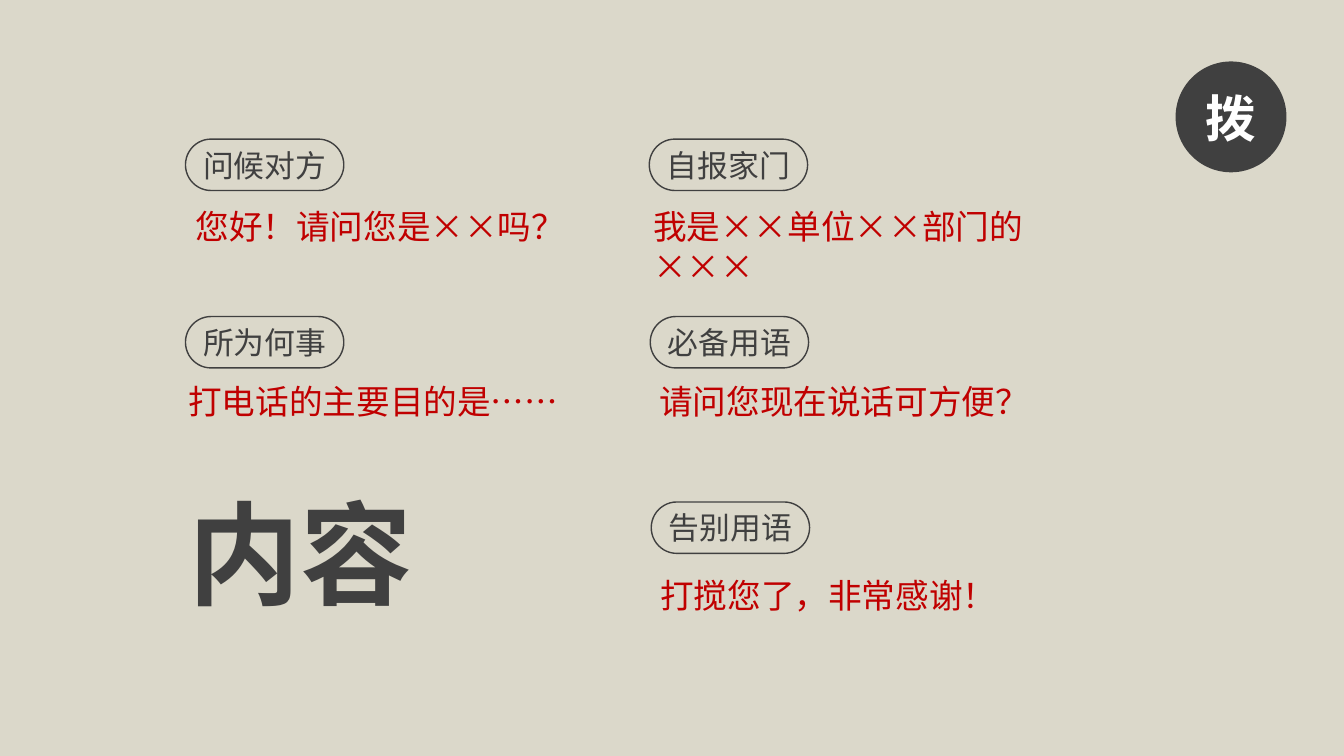
from lxml import etree
from pptx import Presentation
from pptx.dml.color import RGBColor
from pptx.enum.lang import MSO_LANGUAGE_ID as LANG
from pptx.enum.shapes import MSO_SHAPE as SHAPE
from pptx.enum.text import MSO_ANCHOR as ANCHOR, MSO_AUTO_SIZE as AUTO, PP_ALIGN as ALIGN
from pptx.oxml.ns import qn
from pptx.util import Inches, Pt

BEIGE = RGBColor(0xDB, 0xD8, 0xCA)
GRAY = RGBColor(0x40, 0x40, 0x40)
RED = RGBColor(0xC0, 0x00, 0x00)
WHITE = RGBColor(0xFF, 0xFF, 0xFF)
FONT = "Noto Sans CJK SC"


def write(sp, text, size, color, bold=False, align=ALIGN.LEFT, anchor=ANCHOR.TOP,
          wrap=True, fit=AUTO.NONE):
    tf = sp.text_frame
    tf.word_wrap = wrap
    tf.auto_size = fit
    tf.vertical_anchor = anchor
    p = tf.paragraphs[0]
    p.alignment = align
    r = p.add_run()
    r.text = text
    r.font.name = FONT
    r.font.size = Pt(size)
    r.font.bold = bold
    r.font.color.rgb = color
    r.font.language_id = LANG.SIMPLIFIED_CHINESE
    latin = r.font._element.find(qn("a:latin"))
    ea = etree.Element(qn("a:ea"), typeface=FONT)
    latin.addnext(ea)


prs = Presentation()
prs.slide_width = Inches(13.33)
prs.slide_height = Inches(7.5)
slide = prs.slides.add_slide(prs.slide_layouts[5])
slide.background.fill.solid()
slide.background.fill.fore_color.rgb = BEIGE

title = slide.shapes.title
title.left, title.top = Inches(1.77), Inches(4.76)
title.width, title.height = Inches(3.34), Inches(1.43)
write(title, "内容", 80, GRAY, bold=True, align=ALIGN.JUSTIFY, fit=AUTO.SHAPE_TO_FIT_TEXT)

badge = slide.shapes.add_shape(SHAPE.OVAL, Inches(11.66), Inches(0.61), Inches(1.1), Inches(1.1))
badge.shadow.inherit = False
badge.fill.solid()
badge.fill.fore_color.rgb = GRAY
badge.line.fill.background()
write(badge, "拨", 36, WHITE, bold=True, align=ALIGN.CENTER, anchor=ANCHOR.MIDDLE, wrap=False)

# Label, its left and top; phrase, its left and top
steps = [
    ("问候对方", 1.84, 1.38, "您好！请问您是××吗？", 1.84, 1.99),
    ("自报家门", 6.44, 1.38, "我是××单位××部门的×××", 6.38, 1.99),
    ("所为何事", 1.84, 3.14, "打电话的主要目的是……", 1.77, 3.73),
    ("必备用语", 6.45, 3.14, "请问您现在说话可方便？", 6.44, 3.73),
    ("告别用语", 6.46, 4.98, "打搅您了，非常感谢！", 6.45, 5.65),
]
for label, label_x, label_y, phrase, phrase_x, phrase_y in steps:
    pill = slide.shapes.add_shape(SHAPE.FLOWCHART_TERMINATOR, Inches(label_x), Inches(label_y),
                                  Inches(1.57), Inches(0.51))
    pill.shadow.inherit = False
    pill.fill.background()
    pill.line.color.rgb = GRAY
    pill.line.width = Pt(1)
    write(pill, label, 22, GRAY, align=ALIGN.CENTER, anchor=ANCHOR.MIDDLE, wrap=False)

    box = slide.shapes.add_textbox(Inches(phrase_x), Inches(phrase_y), Inches(4.61), Inches(0.5))
    write(box, phrase, 24, RED, fit=AUTO.SHAPE_TO_FIT_TEXT)

prs.save("out.pptx")
